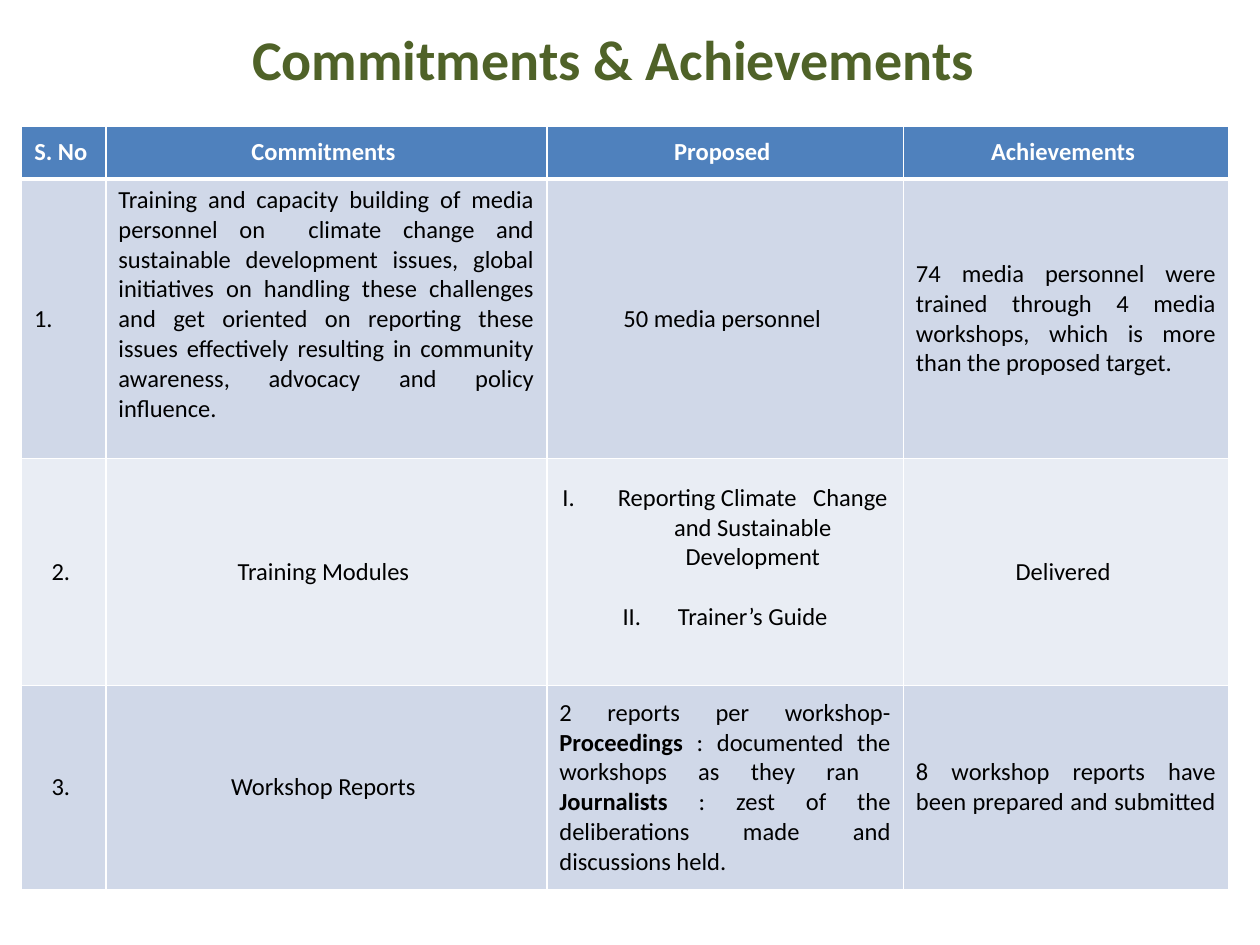
import pptx
import pptx.util
import pptx.dml.color
import pptx.enum.text
import pptx.oxml
import pptx.oxml.ns

Inches = pptx.util.Inches
Pt = pptx.util.Pt
ALIGN = pptx.enum.text.PP_ALIGN
MIDDLE = pptx.enum.text.MSO_ANCHOR.MIDDLE

THEME = {
    "font": "Calibri", "title": "4F6228", "head": "4F81BD",
    "bands": ("D0D8E8", "E9EDF4"), "light": "FFFFFF", "dark": "000000",
    "title_pt": 32, "body_pt": 14,
}

TITLE = "Commitments & Achievements "
HEADS = ("S. No ", "Commitments ", "Proposed ", "Achievements ")
BREAK = "\n"

# Each cell: alignment (l, c, j, or n for a numbered list) and its parts.
# In a list each part is an item; elsewhere a part is a run, bold if in BOLD.
BOLD = ("Proceedings", "Journalists")
ROWS = (
    (
        ("l", ("1.",)),
        ("j", ("Training and capacity building of media personnel on  climate "
               "change and sustainable development issues, global initiatives "
               "on handling these challenges and get oriented on reporting "
               "these issues effectively resulting in community awareness, "
               "advocacy and policy influence.",)),
        ("c", ("50 media personnel ",)),
        ("j", ("74 media personnel were trained through 4 media workshops, "
               "which is more than the proposed target. ",)),
    ),
    (
        ("c", ("2. ",)),
        ("c", ("Training Modules ",)),
        ("n", ("Reporting Climate   Change and Sustainable Development",
               "Trainer’s Guide")),
        ("c", ("Delivered ",)),
    ),
    (
        ("c", ("3. ",)),
        ("c", ("Workshop Reports ",)),
        ("j", ("2 reports per workshop-", BREAK, "Proceedings",
               " : documented the workshops as they ran ", BREAK,
               "Journalists",
               " : zest of the deliberations made and discussions held. ")),
        ("j", ("8 workshop reports have been prepared and submitted ",)),
    ),
)
WIDTHS = (0.67, 3.5, 2.83, 2.58)
HEIGHTS = (0.42, 2.22, 1.8, 1.62)
LOW_PAD = {(1, 1): 0.28, (2, 2): 0.28}  # cells whose text sits high

ALIGNS = {"l": ALIGN.LEFT, "c": ALIGN.CENTER, "j": ALIGN.JUSTIFY,
          "n": ALIGN.CENTER}


def rgb(code):
    return pptx.dml.color.RGBColor.from_string(code)


def add_run(para, text, size, color, bold=False):
    run = para.add_run()
    run.text = text
    font = run.font
    font.name, font.size, font.bold = THEME["font"], Pt(size), bold
    font.color.rgb = rgb(color)


def add_edges(cell, low):
    """Draw white cell borders; low is the bottom width in points."""
    props = cell._tc.get_or_add_tcPr()
    for spot, (side, width) in enumerate(
            (("L", 1), ("R", 1), ("T", 1), ("B", low))):
        props.insert(spot, pptx.oxml.parse_xml(
            f'<a:ln{side} {pptx.oxml.ns.nsdecls("a")} w="{Pt(width)}">'
            f'<a:solidFill><a:srgbClr val="{THEME["light"]}"/></a:solidFill>'
            f'</a:ln{side}>'))


def number(para):
    """Give a list item a roman number with a hanging indent."""
    props = para._p.get_or_add_pPr()
    props.set("marL", str(Inches(0.44)))
    props.set("indent", str(-Inches(0.44)))
    props.append(pptx.oxml.parse_xml(
        f'<a:buAutoNum {pptx.oxml.ns.nsdecls("a")} type="romanUcPeriod"/>'))


def fill_cell(cell, kind, parts, fill, color, bold=False, low=1):
    cell.fill.solid()
    cell.fill.fore_color.rgb = rgb(fill)
    cell.vertical_anchor = MIDDLE
    add_edges(cell, low)
    para = cell.text_frame.paragraphs[0]
    para.alignment = ALIGNS[kind]
    for spot, part in enumerate(parts):
        if kind == "n":
            if spot:
                para = cell.text_frame.add_paragraph()
                para.alignment = ALIGNS[kind]
                para.space_before = Pt(17)
            number(para)
        if part == BREAK:
            para.add_line_break()
        else:
            add_run(para, part, THEME["body_pt"], color, bold or part in BOLD)


def add_title(slide):
    box = slide.shapes.add_textbox(Inches(0.42), 0, Inches(9), Inches(0.92))
    frame = box.text_frame
    frame.word_wrap = True
    frame.vertical_anchor = MIDDLE
    para = frame.paragraphs[0]
    para.alignment = ALIGN.CENTER
    add_run(para, TITLE, THEME["title_pt"], THEME["title"], True)


def add_grid(slide):
    table = slide.shapes.add_table(
        len(HEIGHTS), len(WIDTHS), Inches(0.17), Inches(1),
        Inches(sum(WIDTHS)), Inches(sum(HEIGHTS))).table
    for col, width in zip(table.columns, WIDTHS):
        col.width = Inches(width)
    for row, height in zip(table.rows, HEIGHTS):
        row.height = Inches(height)
    for c, head in enumerate(HEADS):
        fill_cell(table.cell(0, c), "c", (head,), THEME["head"],
                  THEME["light"], True, 3)
    for r, row in enumerate(ROWS, 1):
        for c, (kind, parts) in enumerate(row):
            fill_cell(table.cell(r, c), kind, parts,
                      THEME["bands"][(r - 1) % 2], THEME["dark"])
    for (r, c), pad in LOW_PAD.items():
        table.cell(r, c).margin_bottom = Inches(pad)


def main():
    deck = pptx.Presentation()
    deck.slide_width, deck.slide_height = Inches(10), Inches(7.5)
    slide = deck.slides.add_slide(deck.slide_layouts[6])
    add_title(slide)
    add_grid(slide)
    deck.save("out.pptx")


if __name__ == "__main__":
    main()
